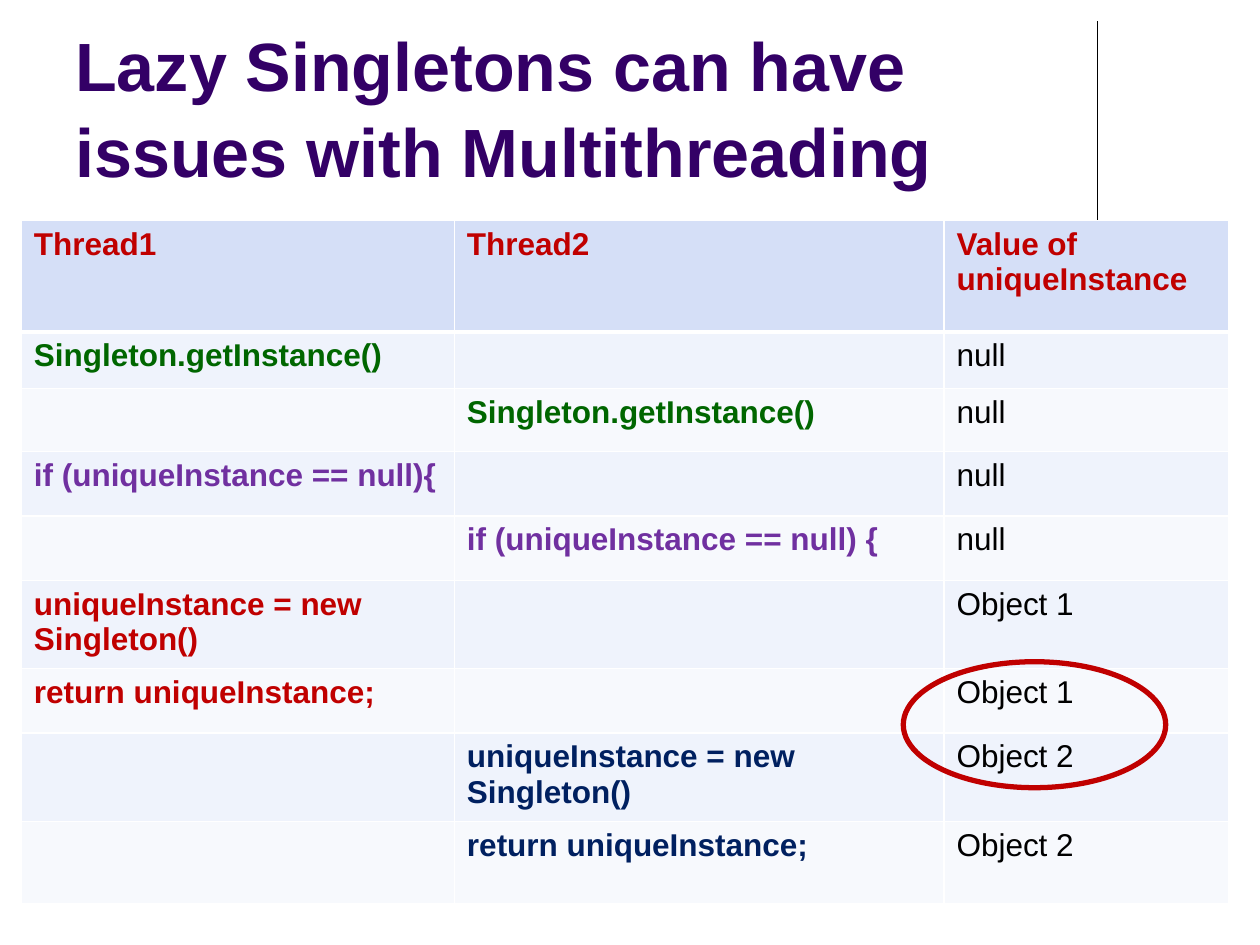
from lxml.etree import SubElement
from pptx import Presentation
from pptx.dml.color import RGBColor
from pptx.enum.shapes import MSO_CONNECTOR, MSO_SHAPE
from pptx.enum.text import MSO_ANCHOR
from pptx.oxml.ns import qn
from pptx.util import Cm, Pt

COLORS = {
    "title": "330066", "red": "C00000", "green": "006600", "purple": "7030A0",
    "navy": "002060", "black": "000000", "white": "FFFFFF",
    "header": "D5DFF7", "odd": "EFF3FC", "even": "F7F9FD",
}
HEADINGS = ["Thread1", "Thread2", "Value of uniqueInstance"]
# Thread number, statement, colour, value of uniqueInstance afterwards
STEPS = [
    (1, "Singleton.getInstance()", "green", "null"),
    (2, "Singleton.getInstance()", "green", "null"),
    (1, "if (uniqueInstance == null){", "purple", "null"),
    (2, "if (uniqueInstance == null) {", "purple", "null"),
    (1, "uniqueInstance = new Singleton()", "red", "Object 1"),
    (1, "return uniqueInstance;", "red", "Object 1"),
    (2, "uniqueInstance = new Singleton()", "navy", "Object 2"),
    (2, "return uniqueInstance;", "navy", "Object 2"),
]
COLUMN_WIDTHS = [8.73, 9.87, 5.74]
ROW_HEIGHTS = [2.24, 1.14, 1.27, 1.3, 1.3, 1.67, 1.3, 1.67, 1.67]


def color(name):
    return RGBColor.from_string(COLORS[name])


def format_runs(para, size, color_name, bold):
    for span in para.runs:
        span.font.name = "Arial"
        span.font.size = Pt(size)
        span.font.bold = bold
        span.font.color.rgb = color(color_name)


def add_title(page, text):
    box = page.shapes.add_textbox(Cm(1.27), Cm(0.33), Cm(20.96), Cm(3.6))
    frame = box.text_frame
    frame.word_wrap = True
    frame.vertical_anchor = MSO_ANCHOR.BOTTOM
    frame.margin_bottom = Cm(0.08)
    frame.text = text
    para = frame.paragraphs[0]
    para.line_spacing = 1.05
    format_runs(para, 39, "title", True)


def add_rule(page):
    rule = page.shapes.add_connector(
        MSO_CONNECTOR.STRAIGHT, Cm(22.12), Cm(0.43), Cm(22.12), Cm(4.65))
    rule.line.color.rgb = color("black")
    rule.line.width = Pt(0.75)
    SubElement(rule._element.spPr, qn("a:effectLst"))


def set_borders(cell, widths):
    """Draw white borders; widths maps a side letter (L, R, T, B) to points."""
    properties = cell._tc.get_or_add_tcPr()
    for side, width in widths.items():
        line = SubElement(properties, qn(f"a:ln{side}"), w=str(Pt(width)))
        fill = SubElement(line, qn("a:solidFill"))
        SubElement(fill, qn("a:srgbClr"), val=COLORS["white"])


def fill_cell(cell, text, color_name, bold, row):
    set_borders(cell, {"L": 1, "R": 1, "T": 3 if row == 1 else 1,
                       "B": 3 if row == 0 else 1})
    cell.fill.solid()
    band = "header" if row == 0 else ("odd" if row % 2 else "even")
    cell.fill.fore_color.rgb = color(band)
    if text:
        cell.text_frame.text = text
        format_runs(cell.text_frame.paragraphs[0], 18, color_name, bold)


def add_thread_table(page):
    table = page.shapes.add_table(
        len(ROW_HEIGHTS), len(COLUMN_WIDTHS), Cm(0.43), Cm(4.45),
        Cm(sum(COLUMN_WIDTHS)), Cm(sum(ROW_HEIGHTS))).table
    for column, width in zip(table.columns, COLUMN_WIDTHS):
        column.width = Cm(width)
    for table_row, height in zip(table.rows, ROW_HEIGHTS):
        table_row.height = Cm(height)
    for index, heading in enumerate(HEADINGS):
        fill_cell(table.cell(0, index), heading, "red", True, 0)
    for row, (thread, statement, color_name, value) in enumerate(STEPS, 1):
        for index in range(2):
            text = statement if thread == index + 1 else ""
            fill_cell(table.cell(row, index), text, color_name, True, row)
        fill_cell(table.cell(row, 2), value, "black", False, row)


def add_highlight(page):
    ring = page.shapes.add_shape(
        MSO_SHAPE.OVAL, Cm(18.21), Cm(13.34), Cm(5.29), Cm(2.54))
    ring.shadow.inherit = False
    ring.fill.background()
    ring.line.color.rgb = color("red")
    ring.line.width = Pt(3)


def main():
    deck = Presentation()
    deck.slide_width, deck.slide_height = Cm(25.4), Cm(19.05)
    page = deck.slides.add_slide(deck.slide_layouts[6])
    add_rule(page)
    add_title(page, "Lazy Singletons can have issues with Multithreading")
    add_thread_table(page)
    add_highlight(page)
    deck.save("out.pptx")


if __name__ == "__main__":
    main()
